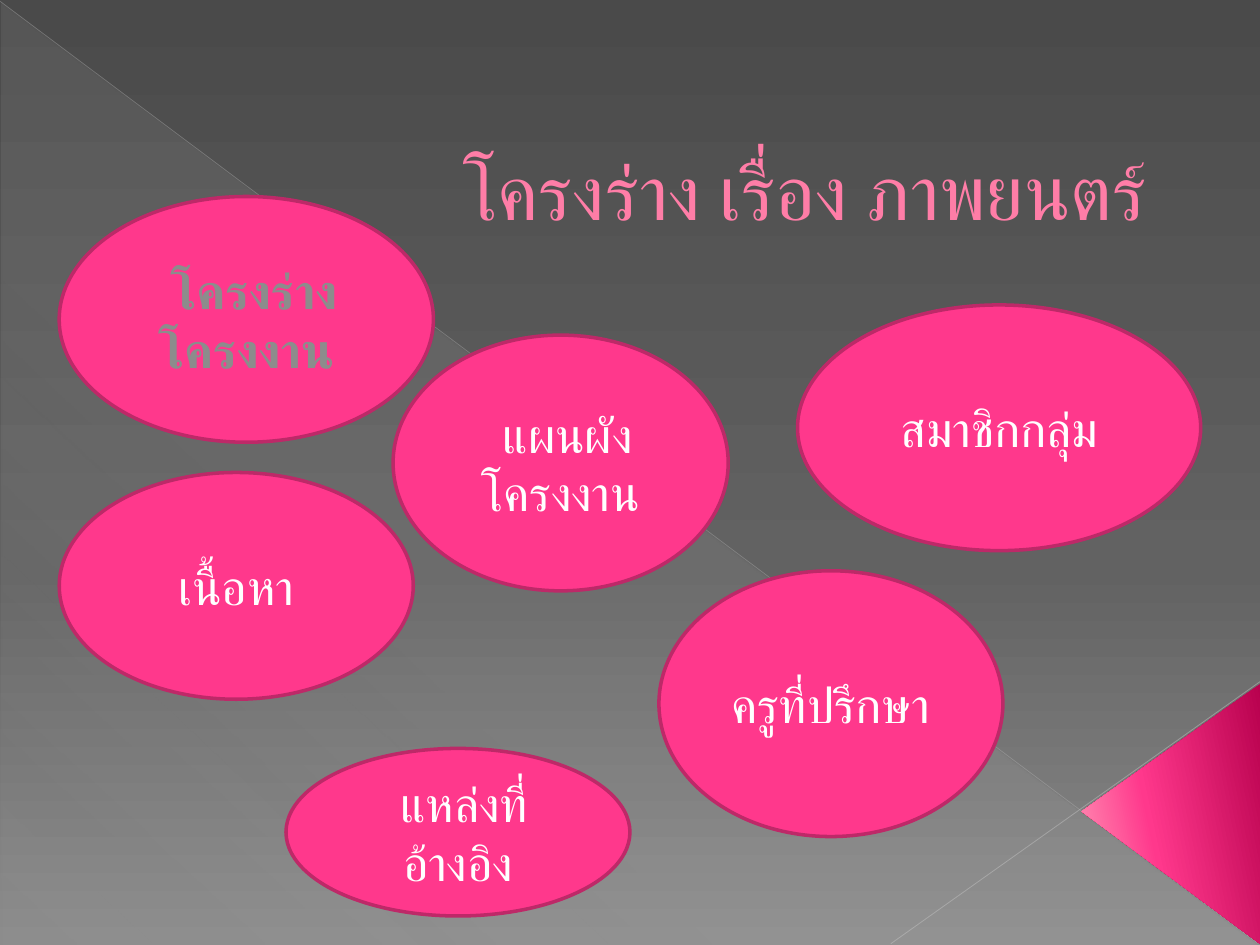
import lxml.etree
import pptx
import pptx.dml.color
import pptx.enum.lang
import pptx.enum.shapes
import pptx.enum.text
import pptx.oxml.ns
import pptx.util

Inches = pptx.util.Inches
Pt = pptx.util.Pt
qn = pptx.oxml.ns.qn
SHAPES = pptx.enum.shapes.MSO_SHAPE
ALIGN = pptx.enum.text.PP_ALIGN
ANCHOR = pptx.enum.text.MSO_ANCHOR

COLORS = {
    "title": "FF7DA7",
    "bubble": "FF388C",
    "border": "BD2968",
    "text": "FFFFFF",
    "muted": "8C8C8C",
    "diagonal": "BFBFBF",
    "corner_line": "C6C6C6",
    "backdrop_top": "4A4A4A",
    "backdrop_middle": "626262",
    "veil": "D2D2D2",
    "corner_dark": "B8014E",
    "corner_light": "FF9CB9",
}


class SlideBuilder:
    font_name = "TeX Gyre Adventor"

    def __init__(self, slide):
        self.slide = slide

    def color(self, name):
        return pptx.dml.color.RGBColor.from_string(COLORS[name])

    def set_alpha(self, color_element, percent):
        alpha = lxml.etree.SubElement(color_element, qn("a:alpha"))
        alpha.set("val", str(percent * 1000))

    def apply_gradient(self, fill, properties, stops, angle):
        fill.solid()
        gradient = lxml.etree.Element(qn("a:gradFill"), rotWithShape="1")
        stop_list = lxml.etree.SubElement(gradient, qn("a:gsLst"))
        for position, name, opacity in stops:
            stop = lxml.etree.SubElement(stop_list, qn("a:gs"), pos=str(position * 1000))
            color = lxml.etree.SubElement(stop, qn("a:srgbClr"), val=COLORS[name])
            if opacity < 100:
                self.set_alpha(color, opacity)
        lxml.etree.SubElement(gradient, qn("a:lin"), ang=str(angle * 60000), scaled="0")
        properties.replace(properties.find(qn("a:solidFill")), gradient)

    def background(self, stops, angle):
        fill = self.slide.background.fill
        fill.solid()
        properties = self.slide.element.find(".//" + qn("p:bgPr"))
        self.apply_gradient(fill, properties, stops, angle)

    def shape(self, kind, left, top, width, height):
        shape = self.slide.shapes.add_shape(
            kind, Inches(left), Inches(top), Inches(width), Inches(height))
        shape.shadow.inherit = False
        return shape

    def gradient_shape(self, kind, box, stops, angle, rotation=0):
        shape = self.shape(kind, *box)
        shape.rotation = rotation
        shape.line.fill.background()
        self.apply_gradient(shape.fill, shape.element.spPr, stops, angle)
        return shape

    def line(self, start, end, color, width, opacity):
        connector = self.slide.shapes.add_connector(
            pptx.enum.shapes.MSO_CONNECTOR.STRAIGHT,
            Inches(start[0]), Inches(start[1]), Inches(end[0]), Inches(end[1]))
        connector.line.color.rgb = self.color(color)
        connector.line.width = Pt(width)
        properties = connector.element.spPr
        self.set_alpha(properties.find(".//" + qn("a:srgbClr")), opacity)
        lxml.etree.SubElement(properties, qn("a:effectLst"))

    def set_text(self, shape, text, size, color, align, anchor, bold=False):
        frame = shape.text_frame
        frame.word_wrap = True
        frame.vertical_anchor = anchor
        paragraph = frame.paragraphs[0]
        paragraph.text = text
        paragraph.alignment = align
        font = paragraph.font
        font.name = self.font_name
        font.size = Pt(size)
        font.bold = bold
        font.color.rgb = self.color(color)
        font.language_id = pptx.enum.lang.MSO_LANGUAGE_ID.THAI

    def title(self, text, left, top, width, height):
        box = self.slide.shapes.add_textbox(
            Inches(left), Inches(top), Inches(width), Inches(height))
        self.set_text(box, text, 44, "title", ALIGN.RIGHT, ANCHOR.BOTTOM)

    def bubble(self, text, box, color="text", bold=False):
        shape = self.shape(SHAPES.OVAL, *box)
        shape.fill.solid()
        shape.fill.fore_color.rgb = self.color("bubble")
        shape.line.color.rgb = self.color("border")
        shape.line.width = Pt(2)
        self.set_text(shape, text, 28, color, ALIGN.CENTER, ANCHOR.MIDDLE, bold)


def main():
    presentation = pptx.Presentation()
    presentation.slide_width = Inches(10)
    presentation.slide_height = Inches(7.5)
    builder = SlideBuilder(presentation.slides.add_slide(presentation.slide_layouts[6]))

    builder.background(
        [(0, "backdrop_top", 100), (60, "backdrop_middle", 100), (100, "muted", 100)], 90)
    builder.gradient_shape(
        SHAPES.RIGHT_TRIANGLE, (0.01, 0.02, 9.98, 7.48),
        [(0, "veil", 10), (70, "veil", 8), (100, "veil", 1)], 133)
    builder.line((0, 0.01), (9.99, 7.49), "diagonal", 0.39, 35)
    builder.line((10, 5.41), (7.07, 7.49), "corner_line", 0.47, 45)
    corner = builder.gradient_shape(
        SHAPES.ISOSCELES_TRIANGLE, (8.26, 5.75, 2.07, 1.42),
        [(0, "corner_dark", 100), (60, "bubble", 100), (100, "corner_light", 100)],
        258, rotation=270)
    corner.adjustments[0] = 0.51

    builder.title("โครงร่าง เรื่อง ภาพยนตร์", 0.7, 0.31, 8.5, 1.61)
    builder.bubble(" โครงร่างโครงงาน", (0.47, 1.56, 2.97, 1.95), "muted", bold=True)
    bubbles = [
        ("เนื้อหา", (0.47, 3.75, 2.81, 1.8)),
        (" แผนผังโครงงาน", (3.12, 2.66, 2.66, 2.03)),
        ("สมาชิกกลุ่ม", (6.33, 2.42, 3.2, 1.95)),
        ("ครูที่ปรึกษา", (5.23, 4.53, 2.73, 2.11)),
        (" แหล่งที่อ้างอิง", (2.27, 5.94, 2.73, 1.33)),
    ]
    for text, box in bubbles:
        builder.bubble(text, box)

    presentation.save("out.pptx")


if __name__ == "__main__":
    main()
